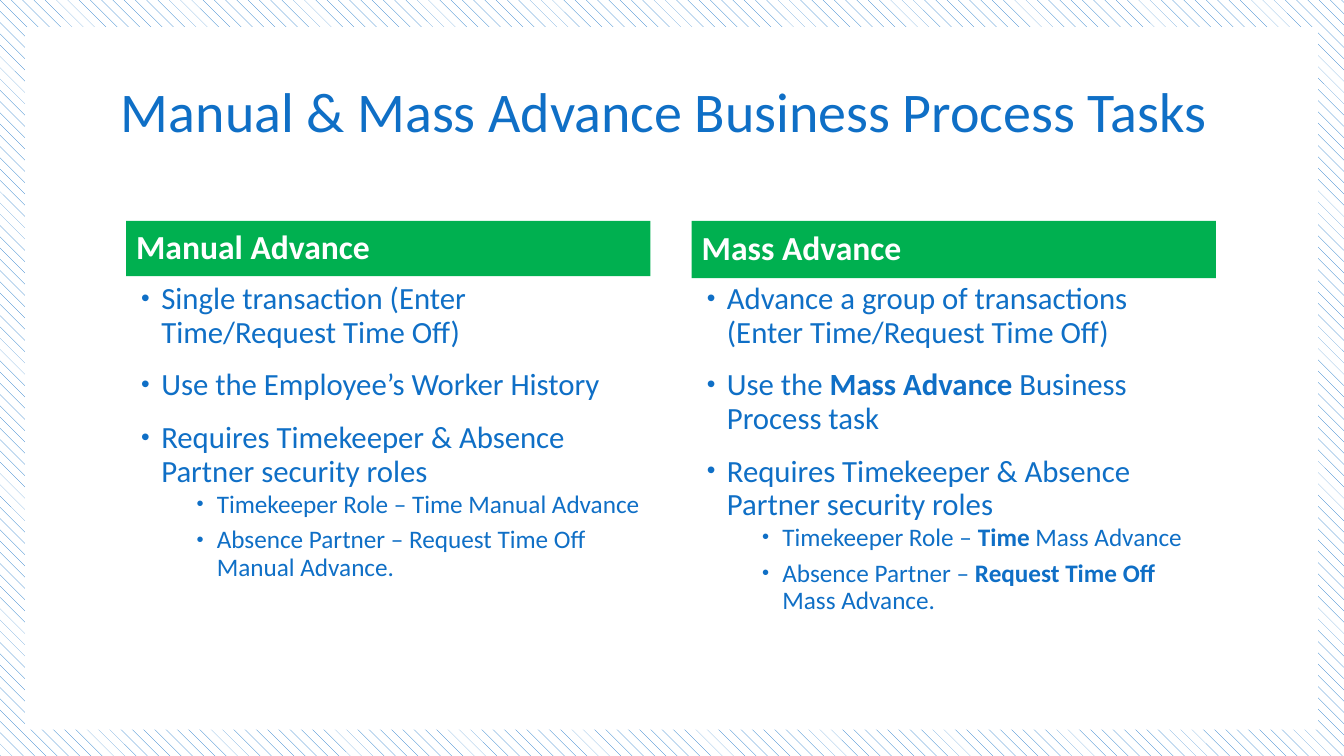
from lxml import etree
from pptx import Presentation
from pptx.dml.color import RGBColor
from pptx.enum.dml import MSO_PATTERN
from pptx.enum.shapes import MSO_SHAPE
from pptx.enum.text import MSO_ANCHOR, MSO_AUTO_SIZE, PP_ALIGN
from pptx.oxml.ns import qn
from pptx.util import Inches, Pt

SHINGLE = MSO_PATTERN.SHINGLE
RECTANGLE = MSO_SHAPE.RECTANGLE
MIDDLE, TOP = MSO_ANCHOR.MIDDLE, MSO_ANCHOR.TOP
NO_AUTOFIT = MSO_AUTO_SIZE.NONE
LEFT = PP_ALIGN.LEFT

BLUE, GREEN, WHITE = "0F6FC6", "00B050", "FFFFFF"
FONT = "Calibri"

TITLE = "Manual & Mass Advance Business Process Tasks"
# Each bullet is (level, runs); every second run is bold.
COLUMNS = [
    {"heading": "Manual Advance", "heading_height": 0.55, "body_height": 3.72,
     "bullets": [
         (0, ["Single transaction (Enter Time/Request Time Off)"]),
         (0, ["Use the Employee’s Worker History"]),
         (0, ["Requires Timekeeper & Absence Partner security roles"]),
         (2, ["Timekeeper Role – Time Manual Advance"]),
         (2, ["Absence Partner – Request Time Off Manual Advance."]),
     ]},
    {"heading": "Mass Advance", "heading_height": 0.57, "body_height": 3.91,
     "bullets": [
         (0, ["Advance a group of transactions (Enter Time/Request Time Off)"]),
         (0, ["Use the ", "Mass Advance", " Business Process task"]),
         (0, ["Requires Timekeeper & Absence Partner security roles"]),
         (2, ["Timekeeper Role – ", "Time", " Mass Advance"]),
         (2, ["Absence Partner – ", "Request Time Off ", "Mass Advance."]),
     ]},
]
# level: (size, left indent, space before, space after)
LEVELS = {0: (22, 0.25, 14, 0), 2: (18, 0.8, 2, 4)}
HANGING = 0.2

COLUMN_LEFT, COLUMN_WIDTH, COLUMN_STEP = 1.25, 5.2, 5.61
HEADING_TOP, BODY_TOP = 2.19, 2.76


def color(hex_code):
    return RGBColor.from_string(hex_code)


def place(sp, left, top, width, height, anchor):
    sp.left, sp.top = Inches(left), Inches(top)
    sp.width, sp.height = Inches(width), Inches(height)
    tf = sp.text_frame
    tf.word_wrap = True
    tf.auto_size = NO_AUTOFIT
    tf.vertical_anchor = anchor
    return tf


def format_paragraph(p, before=0, after=0):
    p.alignment = LEFT
    p.line_spacing = 0.9
    p.space_before, p.space_after = Pt(before), Pt(after)


def add_run(p, text, size, hex_code, bold=False):
    r = p.add_run()
    r.text = text
    r.font.name, r.font.size, r.font.bold = FONT, Pt(size), bold
    r.font.color.rgb = color(hex_code)


def add_bullet(p, indent):
    pPr = p._p.get_or_add_pPr()
    pPr.set("marL", str(Inches(indent)))
    pPr.set("indent", str(-Inches(HANGING)))
    bullet_color = etree.SubElement(pPr, qn("a:buClr"))
    etree.SubElement(bullet_color, qn("a:srgbClr"), val=BLUE)
    etree.SubElement(pPr, qn("a:buSzPct"), val="80000")
    etree.SubElement(pPr, qn("a:buFont"), typeface="Arial")
    etree.SubElement(pPr, qn("a:buChar"), char="•")


def add_line(tf, text, size, hex_code, bold=False):
    p = tf.paragraphs[0]
    format_paragraph(p)
    add_run(p, text, size, hex_code, bold)


def fill_bullets(tf, bullets):
    for i, (level, runs) in enumerate(bullets):
        size, indent, before, after = LEVELS[level]
        p = tf.add_paragraph() if i else tf.paragraphs[0]
        p.level = level
        format_paragraph(p, before, after)
        add_bullet(p, indent)
        for j, text in enumerate(runs):
            add_run(p, text, size, BLUE, bold=j % 2 == 1)


def main():
    prs = Presentation()
    prs.slide_width, prs.slide_height = Inches(13.33), Inches(7.5)
    comparison = prs.slide_layouts[4]
    s = prs.slides.add_slide(comparison)

    background = s.background.fill
    background.patterned()
    background.pattern = SHINGLE
    background.fore_color.rgb = color(BLUE)
    background.back_color.rgb = color(WHITE)

    panel = s.shapes.add_shape(RECTANGLE, Inches(0.25), Inches(0.27),
                               Inches(12.82), Inches(6.97))
    panel.shadow.inherit = False
    panel.fill.solid()
    panel.fill.fore_color.rgb = color(WHITE)
    panel.line.fill.background()
    s.shapes._spTree.insert(2, panel._element)  # behind the placeholders

    title = place(s.shapes.title, 1.1, 0.54, 11.17, 1.18, MIDDLE)
    add_line(title, TITLE, 40, BLUE)

    _, *parts = s.placeholders
    for i, column in enumerate(COLUMNS):
        heading, body = parts[2 * i:2 * i + 2]
        left = COLUMN_LEFT + i * COLUMN_STEP
        tf = place(heading, left, HEADING_TOP, COLUMN_WIDTH,
                   column["heading_height"], MIDDLE)
        heading.fill.solid()
        heading.fill.fore_color.rgb = color(GREEN)
        add_line(tf, column["heading"], 24, WHITE, bold=True)
        tf = place(body, left, BODY_TOP, COLUMN_WIDTH,
                   column["body_height"], TOP)
        fill_bullets(tf, column["bullets"])

    prs.save("out.pptx")


if __name__ == "__main__":
    main()
